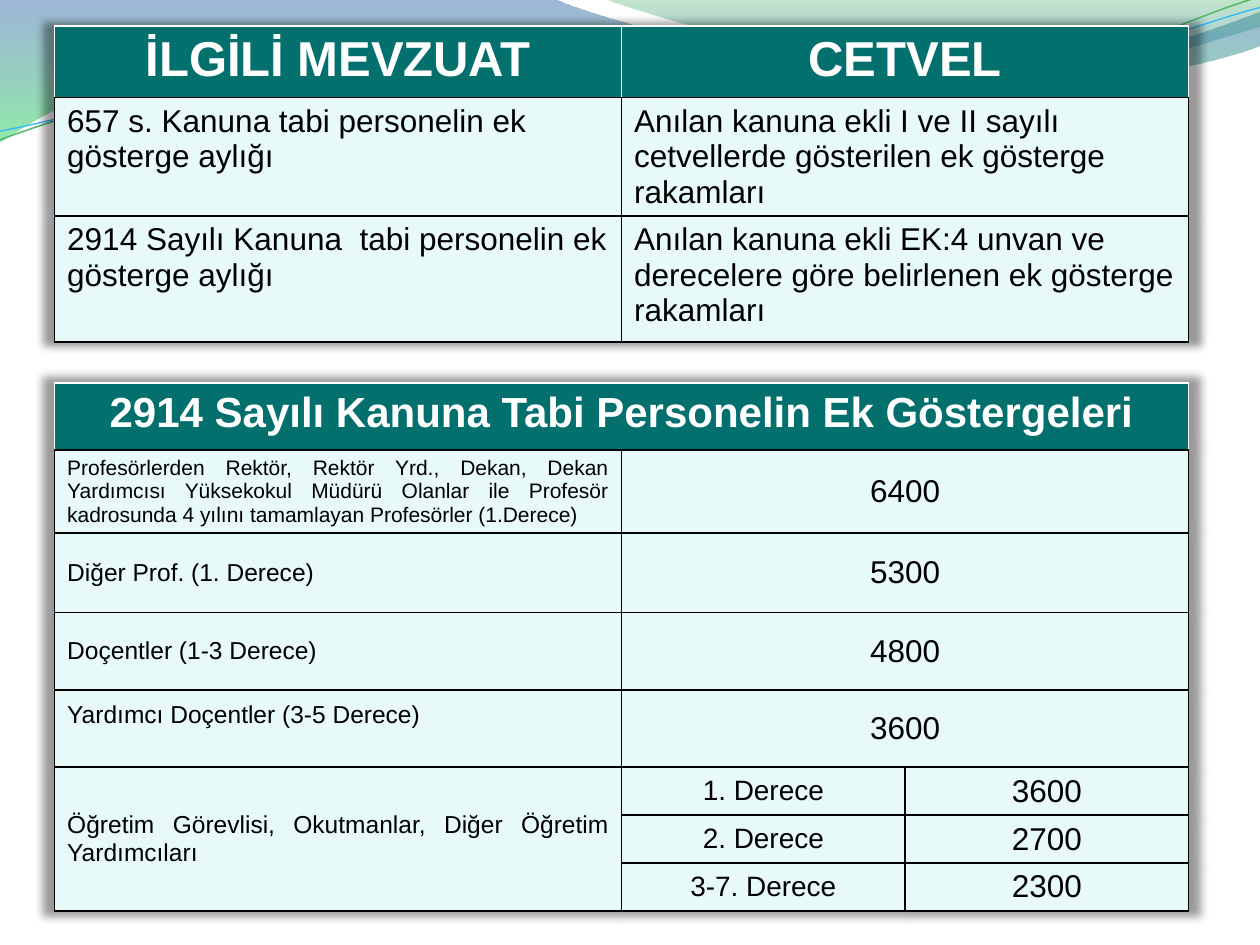
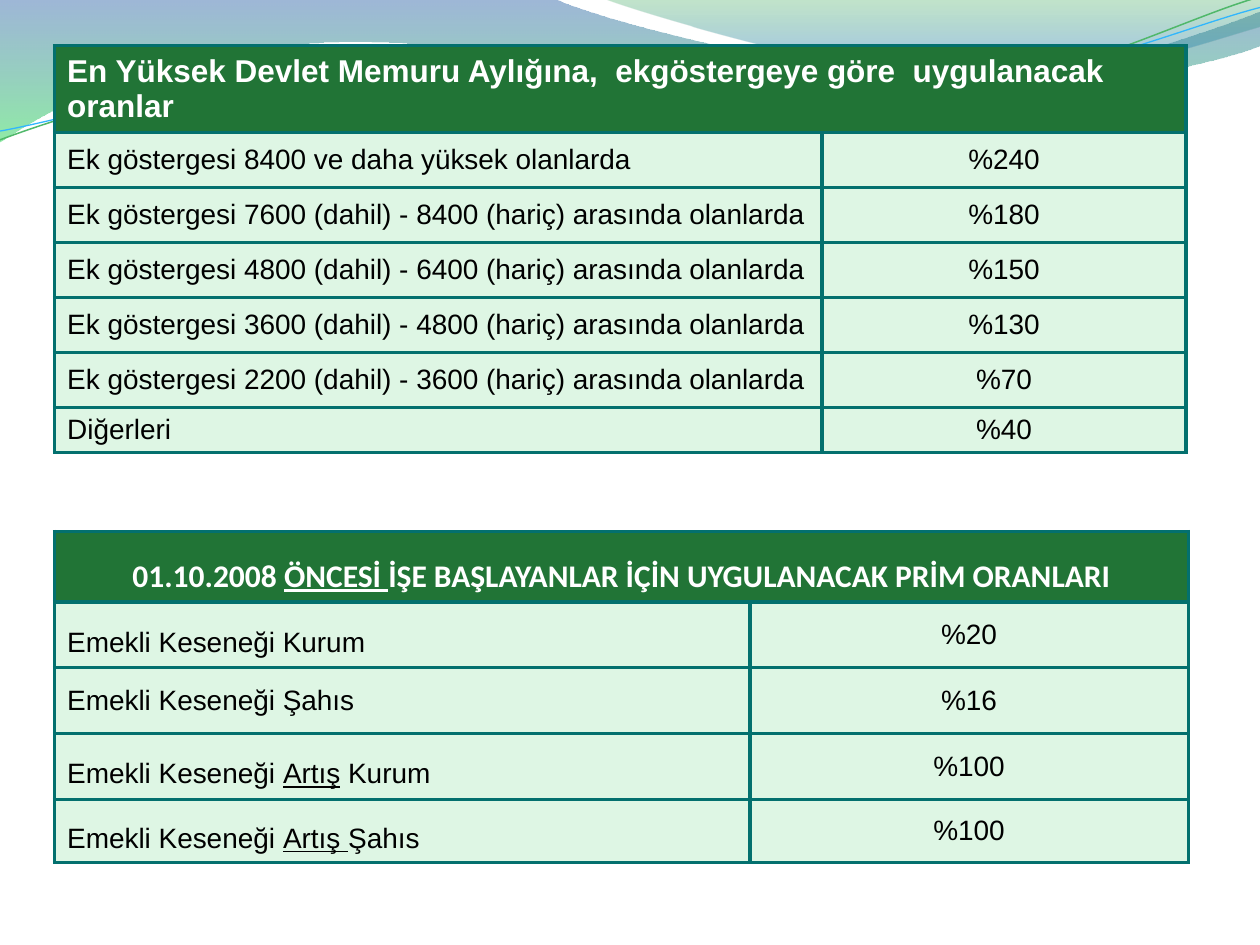
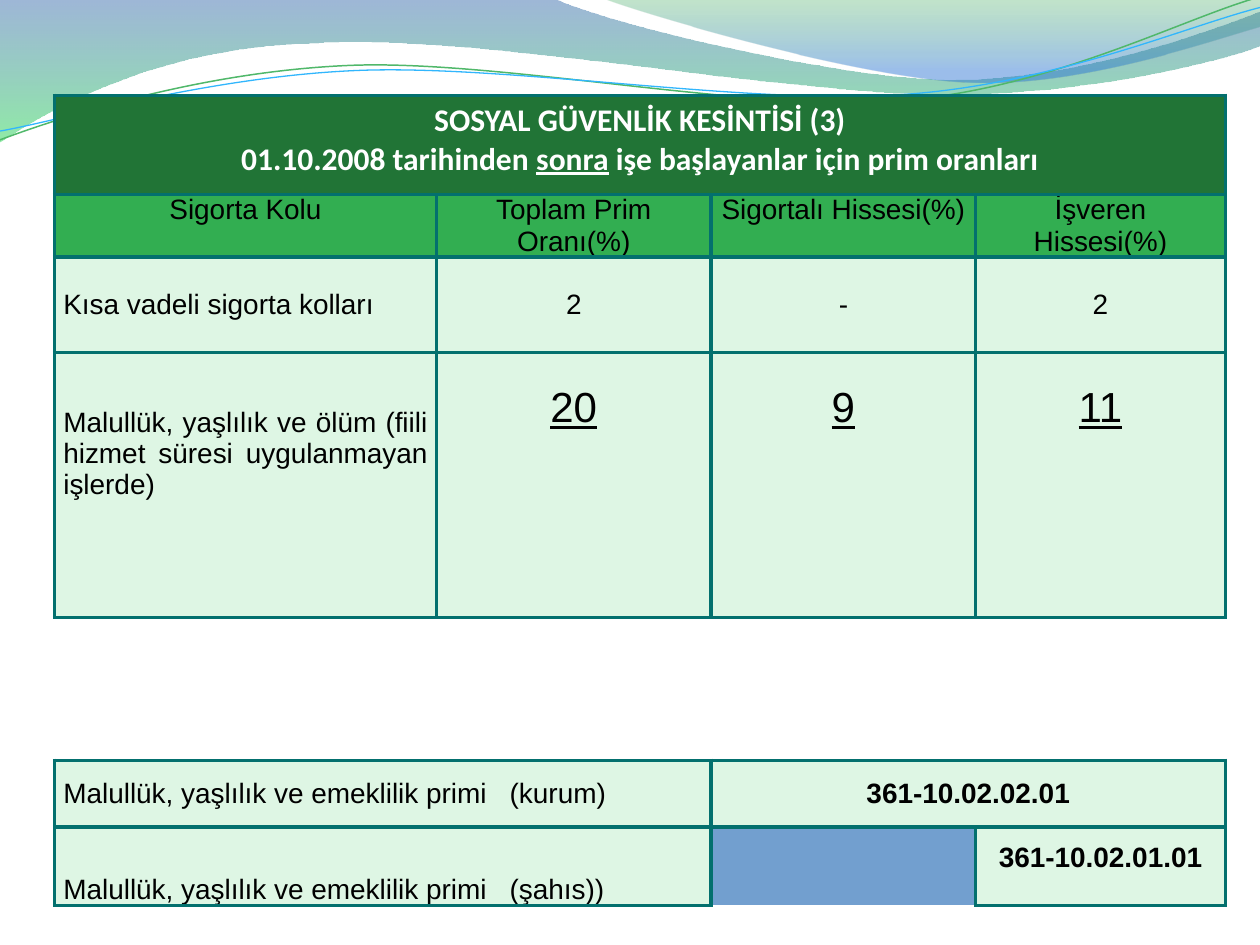
"""Build three slides of pay tables under a shared wave band."""
from math import cos, radians, sin
from pptx import Presentation
from pptx.util import Pt
from pptx.dml.color import RGBColor
from pptx.enum.text import PP_ALIGN as Align, MSO_ANCHOR as Anchor
from pptx.oxml.ns import qn
from lxml.etree import SubElement as Sub, Element

WHITE = RGBColor(0xFF, 0xFF, 0xFF)
BLACK = RGBColor(0, 0, 0)
TEAL = RGBColor(0x03, 0x70, 0x6E)
ICE = RGBColor(0xE7, 0xF9, 0xF8)
DARK = RGBColor(0x21, 0x74, 0x36)
GREEN = RGBColor(0x32, 0xAE, 0x51)
MINT = RGBColor(0xDE, 0xF6, 0xE4)
NAVY = RGBColor(0x29, 0x60, 0xA7)
LIME = RGBColor(0x35, 0xDA, 0x5E)
LEAF = RGBColor(0x36, 0xA7, 0x52)
SKY = RGBColor(0x24, 0x72, 0xD3)
FERN = RGBColor(0x50, 0xB8, 0x6A)
AQUA = RGBColor(0x31, 0xB6, 0xFD)

TILT = 357.3
BANDS = [
    ([(0, 0), (316.8, -0.7), (342.7, 12.2, 478.1, 45.4, 545.8, 45.4),
      (614.2, 45.4, 689.8, 18.7, 720, 6.5), (720.7, 25.9),
      (707.8, 31.7, 626.4, 54.7, 537.1, 54), (447.8, 54, 275, 20.2, 185, 24.5),
      (92.9, 25.9, 33.1, 59.8, -0.7, 81.4), (0, 0)],
     [(0, NAVY, 45), (1, LIME, 55)]),
    ([(344.9, -0.7), (366.5, 7.9, 491, 44.6, 553.7, 46.8),
      (616.3, 49.7, 691.9, 23, 720, 15.1), (720, 0), (344.9, -0.7)],
     [(0, LEAF, 30), (0.8, SKY, 45)]),
]
CURVES = [
    ([(0, 79.9), (34.6, 67, 113.8, 41, 199.4, 37.4),
      (284.4, 33.8, 427, 64.1, 513.4, 57.6),
      (599.8, 51.1, 675.4, 10.8, 718.6, -1.4)], (359.3, 41.4), FERN, 0.85),
    ([(0, 74.9), (33.8, 69.1, 118.1, 43.9, 203.8, 40.3),
      (290.2, 36.7, 429.8, 60.5, 516.2, 54),
      (601.9, 48.2, 677.5, 15.1, 720, 4.3)], (359.6, 42.5), AQUA, 0.75),
]

BASE = dict(size=16, font="Arial", color=BLACK, bold=False, align=Align.LEFT,
            anchor=Anchor.MIDDLE, lead=None, ins=(7.2, 3.6, 7.2, 3.6), sides={})
TOP = dict(anchor=Anchor.TOP)
MID = dict(align=Align.CENTER)
JUST = dict(align=Align.JUSTIFY)
WIDE = dict(lead=1.5)
HEAD = dict(MID, **TOP, color=WHITE, bold=True)
LAW = dict(fill=TEAL, sides=dict(L=WHITE, R=WHITE, T=WHITE))
ICY = dict(fill=ICE, size=18)
NOTE = dict(JUST, size=14)
RANK = dict(MID, size=16)
NUM = dict(MID, size=18)
PALE = dict(fill=MINT)
SLIM = dict(PALE, ins=(5, 0, 5, 0))
BIG = dict(MID, **TOP, size=24, ins=(5, 18.4, 5, 0))
CODE = dict(MID, bold=True)

LEFT = 31.2
KINDS = [
    dict(edge=(BLACK, 1), glow=True),
    dict(edge=(TEAL, 2.25), glow=False),
]
SHARE = [218.2, 157, 151.2, 142.6]

SLIDES = [
    [
        dict(KINDS[0], top=14.8, cols=[324, 324], spans={}, rows=[
            (41, dict(HEAD, **LAW, size=28), ["İLGİLİ MEVZUAT", "CETVEL"]),
            (67.7, dict(ICY, **TOP), [
                "657 s. Kanuna tabi personelin ek gösterge aylığı",
                "Anılan kanuna ekli I ve II sayılı cetvellerde gösterilen ek gösterge rakamları"]),
            (72, dict(ICY, **TOP), [
                "2914 Sayılı Kanuna  tabi personelin ek gösterge aylığı",
                "Anılan kanuna ekli EK:4 unvan ve derecelere göre belirlenen ek gösterge rakamları"]),
        ]),
        dict(KINDS[0], top=218.9, cols=[324, 162, 162],
             spans={(0, 0): (0, 2), (1, 1): (1, 2), (2, 1): (2, 2),
                    (3, 1): (3, 2), (4, 1): (4, 2), (5, 0): (7, 0)}, rows=[
            (38.2, dict(HEAD, **LAW, size=24),
             ["2914 Sayılı Kanuna Tabi Personelin Ek Göstergeleri", None, None]),
            (47.5, ICY, [
                ("Profesörlerden Rektör, Rektör Yrd., Dekan, Dekan Yardımcısı Yüksekokul Müdürü "
                 "Olanlar ile Profesör kadrosunda 4 yılını tamamlayan Profesörler (1.Derece)",
                 dict(JUST, size=12)), ("6400", NUM), None]),
            (45.4, ICY, [("Diğer Prof. (1. Derece)", NOTE), ("5300", NUM), None]),
            (44.2, ICY, [("Doçentler (1-3 Derece)", NOTE), ("4800", NUM), None]),
            (44.2, ICY, [("Yardımcı Doçentler (3-5 Derece)",
                          dict(NOTE, ins=(7.2, 3.6, 7.2, 19.2))), ("3600", NUM), None]),
            (27.4, ICY, [("Öğretim Görevlisi, Okutmanlar, Diğer Öğretim Yardımcıları", NOTE),
                         ("1. Derece", RANK), ("3600", NUM)]),
            (27.4, ICY, [None, ("2. Derece", RANK), ("2700", NUM)]),
            (27.4, ICY, [None, ("3-7. Derece", RANK), ("2300", NUM)]),
        ]),
    ],
    [
        dict(KINDS[1], top=26.1, cols=[438.5, 208.1], spans={(0, 0): (0, 1)}, rows=[
            (49.7, dict(fill=DARK, size=18, color=WHITE, bold=True),
             ["En Yüksek Devlet Memuru Aylığına,  ekgöstergeye göre  uygulanacak oranlar", None]),
            *[(high, PALE, [text, (rate, MID)]) for high, text, rate in [
                (31.4, "Ek göstergesi 8400 ve daha yüksek olanlarda", "%240"),
                (31.4, "Ek göstergesi 7600 (dahil) - 8400 (hariç) arasında olanlarda", "%180"),
                (31.4, "Ek göstergesi 4800 (dahil) - 6400 (hariç) arasında olanlarda", "%150"),
                (31.4, "Ek göstergesi 3600 (dahil) - 4800 (hariç) arasında olanlarda", "%130"),
                (31.4, "Ek göstergesi 2200 (dahil) - 3600 (hariç) arasında olanlarda", "%70"),
                (25.9, "Diğerleri", "%40")]],
        ]),
        dict(KINDS[1], top=303.8, cols=[397.3, 250.6], spans={(0, 0): (0, 1)}, rows=[
            (39.9, dict(HEAD, **WIDE, fill=DARK, size=18, font="Calibri"),
             ["01.10.2008 _ÖNCESİ _İŞE BAŞLAYANLAR İÇİN UYGULANACAK PRİM ORANLARI", None]),
            (37.6, PALE, [("Emekli Keseneği Kurum", WIDE), ("%20", MID)]),
            (37.6, PALE, ["Emekli Keseneği Şahıs", ("%16", MID)]),
            (37.6, PALE, [("Emekli Keseneği _Artış_ Kurum", WIDE), ("%100", MID)]),
            (36, PALE, [("Emekli Keseneği _Artış _Şahıs", WIDE), ("%100", MID)]),
        ]),
    ],
    [
        dict(KINDS[1], top=54.5, cols=SHARE, spans={(0, 0): (0, 3)}, rows=[
            (56.8, dict(HEAD, fill=DARK, size=18, font="Calibri"),
             ["SOSYAL GÜVENLİK KESİNTİSİ (3)\n"
              "01.10.2008 tarihinden _sonra_ işe başlayanlar için prim oranları",
              None, None, None]),
            (35.2, dict(SLIM, **MID, **TOP) | dict(fill=GREEN),
             ["Sigorta Kolu", "Toplam Prim Oranı(%)", "Sigortalı Hissesi(%)",
              "İşveren Hissesi(%)"]),
            (54.7, SLIM, ["Kısa vadeli sigorta kolları", ("2", MID), ("-", MID), ("2", MID)]),
            (151.2, SLIM, [
                ("Malullük, yaşlılık ve ölüm (fiili hizmet süresi uygulanmayan işlerde)",
                 dict(JUST, ins=(5, 0, 5, 35.4))),
                ("_20_", BIG), ("_9_", BIG), ("_11_", BIG)]),
        ]),
        dict(KINDS[1], top=434.5, cols=[SHARE[0], 12.2, 144.8, *SHARE[2:]],
             spans={(0, 0): (0, 2), (0, 3): (0, 4), (1, 0): (1, 2), (1, 3): (1, 4)}, rows=[
            (38.2, SLIM, [("Malullük, yaşlılık ve emeklilik primi   (kurum)", JUST), None, None,
                          ("361-10.02.02.01", CODE), None]),
            (44.6, dict(SLIM, anchor=Anchor.BOTTOM), [
                ("Malullük, yaşlılık ve emeklilik primi   (şahıs))", JUST), None, None,
                ("361-10.02.01.01", dict(CODE, ins=(5, 0, 5, 18.4))), None]),
        ]),
    ],
]


def turn(dot, hub, angle):
    """Rotate a point about a hub."""
    x, y = dot[0] - hub[0], dot[1] - hub[1]
    c, s = cos(radians(angle)), sin(radians(angle))
    return hub[0] + x * c - y * s, hub[1] + x * s + y * c


def draw(slide, path, hub=(0, 0), angle=0):
    """Add an outline of lines and cubic curves with no shadow."""
    dots = [turn(dot, hub, -angle) for part in path for dot in zip(part[::2], part[1::2])]
    dots = [(Pt(x), Pt(y)) for x, y in dots]
    pen = slide.shapes.build_freeform(*dots[0])
    pen.add_line_segments(dots[1:], close=path[0] == path[-1])
    shape = pen.convert_to_shape()
    steps = list(shape.element.iter(qn("a:lnTo")))
    for part in path[1:]:
        group = [steps.pop(0) for _ in range(len(part) // 2)]
        if len(group) == 3:
            curve = Element(qn("a:cubicBezTo"))
            group[0].addprevious(curve)
            for step in group:
                curve.append(step[0])
                step.getparent().remove(step)
    shape.rotation = angle
    shape.shadow.inherit = False
    return shape


def add_waves(slide):
    """Draw the shaded bands and thin curves along the top."""
    for path, stops in BANDS:
        shape = draw(slide, path)
        shape.line.fill.background()
        fill = shape.fill
        fill.gradient()
        fill.gradient_angle = 270
        for stop, (place, color, _) in zip(fill.gradient_stops, stops):
            stop.position = place
            stop.color.rgb = color
        for node, (_, _, alpha) in zip(shape.element.iter(qn("a:srgbClr")), stops):
            Sub(node, qn("a:alpha"), val=str(alpha * 1000))
    for path, hub, color, width in CURVES:
        shape = draw(slide, path, hub, TILT)
        shape.fill.background()
        shape.line.color.rgb = color
        shape.line.width = Pt(width)


def add_edge(cell, side, color, width):
    """Set one border of a cell."""
    line = Sub(cell._tc.get_or_add_tcPr(), qn("a:ln" + side), w=str(Pt(width)))
    Sub(Sub(line, qn("a:solidFill")), qn("a:srgbClr"), val=str(color))


def add_glow(table):
    """Put a soft shadow all round a table."""
    glow = Element(qn("a:effectLst"))
    cast = Sub(glow, qn("a:outerShdw"), blurRad=str(Pt(5)), sx="102000", sy="102000",
               algn="ctr", rotWithShape="0")
    Sub(Sub(cast, qn("a:srgbClr"), val=str(BLACK)), qn("a:alpha"), val="40000")
    table._tbl.tblPr.insert(0, glow)


def write(cell, text, look):
    """Add paragraphs, with underlined runs between underscores."""
    frame = cell.text_frame
    for i, line in enumerate(text.split("\n")):
        para = frame.add_paragraph() if i else frame.paragraphs[0]
        para.alignment = look["align"]
        if look["lead"]:
            para.line_spacing = look["lead"]
        for j, piece in enumerate(line.split("_")):
            if not piece:
                continue
            run = para.add_run()
            run.text = piece
            font = run.font
            font.name, font.size, font.bold = look["font"], Pt(look["size"]), look["bold"]
            font.color.rgb = look["color"]
            font.underline = j % 2 == 1


def style(cell, look, edge):
    """Set a cell's borders, fill, insets and anchor."""
    color, width = edge
    for side in "LRTB":
        add_edge(cell, side, look["sides"].get(side, color), width)
    cell.fill.solid()
    cell.fill.fore_color.rgb = look["fill"]
    cell.vertical_anchor = look["anchor"]
    (cell.margin_left, cell.margin_top,
     cell.margin_right, cell.margin_bottom) = map(Pt, look["ins"])


def add_grid(slide, data):
    """Add one table."""
    cols, rows = data["cols"], data["rows"]
    high = sum(row[0] for row in rows)
    table = slide.shapes.add_table(len(rows), len(cols), Pt(LEFT), Pt(data["top"]),
                                   Pt(sum(cols)), Pt(high)).table
    table.first_row = table.horz_banding = False
    if data["glow"]:
        add_glow(table)
    for col, width in zip(table.columns, cols):
        col.width = Pt(width)
    for r, (tall, base, items) in enumerate(rows):
        table.rows[r].height = Pt(tall)
        for c, item in enumerate(items):
            text, extra = item if isinstance(item, tuple) else (item, {})
            look = BASE | base | extra
            cell = table.cell(r, c)
            style(cell, look, data["edge"])
            if text:
                write(cell, text, look)
    for start, end in data["spans"].items():
        table.cell(*start).merge(table.cell(*end))


def main():
    """Build and save the deck."""
    deck = Presentation()
    deck.slide_width, deck.slide_height = Pt(720), Pt(540)
    for grids in SLIDES:
        slide = deck.slides.add_slide(deck.slide_layouts[6])
        add_waves(slide)
        for data in grids:
            add_grid(slide, data)
    deck.save("out.pptx")


if __name__ == "__main__":
    main()
